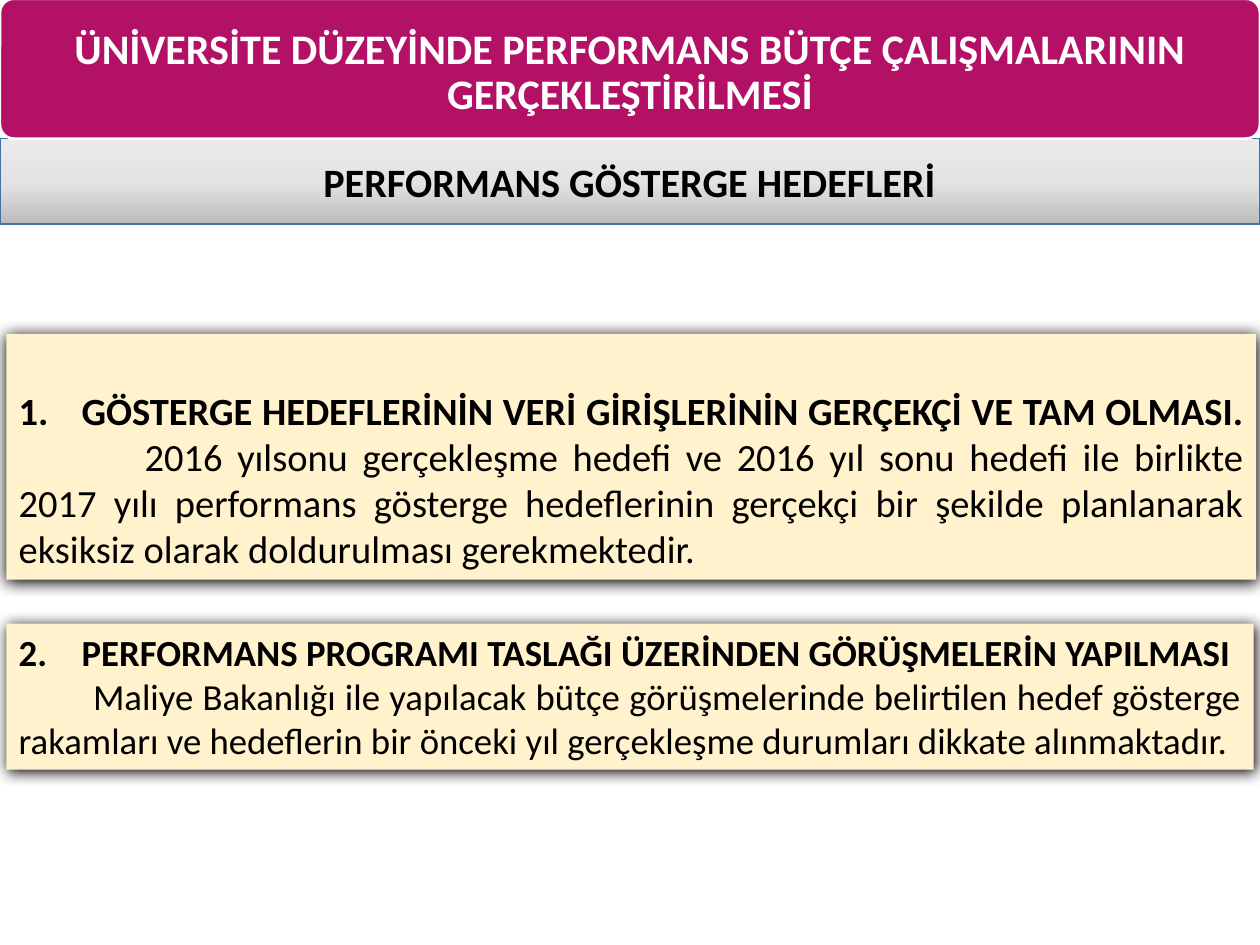
from dataclasses import dataclass

from pptx import Presentation
from pptx.dml.color import RGBColor
from pptx.enum import shapes, text
from pptx.oxml import parse_xml
from pptx.oxml.ns import nsdecls
from pptx.util import Inches, Pt


@dataclass(frozen=True)
class Theme:
    font: str = "Calibri"
    ink: str = "000000"
    light: str = "FFFFFF"
    banner: str = "B31166"
    card: str = "FFF2CC"
    edge: str = "43739E"
    greys: tuple = ((0, "EBEAEA"), (50, "E4E3E3"), (100, "BDBCBC"))
    title_size: int = 24
    subtitle_size: int = 23


@dataclass(frozen=True)
class Box:
    left: float
    top: float
    width: float
    height: float

    def lengths(self) -> tuple:
        return tuple(Inches(v) for v in (self.left, self.top, self.width, self.height))


@dataclass(frozen=True)
class Card:
    box: Box
    number: int
    heading: str
    body: str
    size: int
    body_indent: float
    top_inset: float = 0.05


THEME = Theme()
HANGING = 0.5
BANNER = Box(0, -0.01, 10, 1.11)
TITLE = Box(0.05, 0.17, 9.9, 0.83)
SUBTITLE = Box(0, 1.1, 10, 0.68)
CARDS = (
    Card(Box(0.05, 2.65, 9.92, 1.95), 1,
         "GÖSTERGE HEDEFLERİNİN VERİ GİRİŞLERİNİN GERÇEKÇİ VE TAM OLMASI. ",
         "2016 yılsonu gerçekleşme hedefi ve 2016 yıl sonu hedefi ile birlikte 2017 yılı "
         "performans gösterge hedeflerinin gerçekçi bir şekilde planlanarak eksiksiz "
         "olarak doldurulması gerekmektedir.",
         size=22, body_indent=1, top_inset=0.42),
    Card(Box(0.05, 4.95, 9.9, 1.16), 2,
         "PERFORMANS PROGRAMI TASLAĞI ÜZERİNDEN GÖRÜŞMELERİN YAPILMASI ",
         "Maliye Bakanlığı ile yapılacak bütçe görüşmelerinde belirtilen hedef gösterge "
         "rakamları ve hedeflerin bir önceki yıl gerçekleşme durumları dikkate alınmaktadır.",
         size=21, body_indent=0.59),
)


def add_box(s, box: Box, kind=shapes.MSO_SHAPE.RECTANGLE):
    sp = s.shapes.add_shape(kind, *box.lengths())
    sp.shadow.inherit = False
    return sp


def set_solid(sp, color: str) -> None:
    sp.fill.solid()
    sp.fill.fore_color.rgb = RGBColor.from_string(color)


def set_line(sp, color: str, width: float) -> None:
    sp.line.color.rgb = RGBColor.from_string(color)
    sp.line.width = Pt(width)


def set_gradient(sp, stops: tuple) -> None:
    """Fill from top to bottom with (percent, colour) stops."""
    gs = "".join(f'<a:gs pos="{pos * 1000}"><a:srgbClr val="{color}"/></a:gs>'
                 for pos, color in stops)
    sp.fill.background()
    old = sp._element.spPr.find("{*}noFill")
    old.getparent().replace(old, parse_xml(
        f'<a:gradFill {nsdecls("a")} rotWithShape="1"><a:gsLst>{gs}</a:gsLst>'
        '<a:lin ang="5400000" scaled="0"/></a:gradFill>'))


def set_shadow(sp) -> None:
    effects = sp._element.spPr.find("{*}effectLst")
    effects.append(parse_xml(
        f'<a:outerShdw {nsdecls("a")} blurRad="{Pt(8.5)}" dist="{Pt(1)}" dir="5400000" '
        f'algn="t" rotWithShape="0"><a:srgbClr val="{THEME.ink}"/></a:outerShdw>'))


def set_frame(sp, anchor, top_inset: float = 0.05):
    tf = sp.text_frame
    formats = dict(word_wrap=True, auto_size=text.MSO_AUTO_SIZE.NONE,
                   vertical_anchor=anchor, margin_left=Inches(0.1),
                   margin_right=Inches(0.1), margin_top=Inches(top_inset),
                   margin_bottom=Inches(0.05))
    for name, value in formats.items():
        setattr(tf, name, value)
    return tf


def write(p, words: str, size: int, color: str, align, bold: bool = True) -> None:
    p.alignment = align
    r = p.add_run()
    r.text = words
    for name, value in dict(name=THEME.font, size=Pt(size), bold=bold).items():
        setattr(r.font, name, value)
    r.font.color.rgb = RGBColor.from_string(color)


def set_indent(p, left: float, first: float) -> None:
    pPr = p._p.get_or_add_pPr()
    pPr.set("marL", str(Inches(left)))
    pPr.set("indent", str(Inches(first)))


def set_number(p, start: int) -> None:
    set_indent(p, HANGING, -HANGING)
    pPr = p._p.get_or_add_pPr()
    pPr.append(parse_xml(f'<a:buFont {nsdecls("a")} typeface="+mj-lt"/>'))
    pPr.append(parse_xml(
        f'<a:buAutoNum {nsdecls("a")} type="arabicPeriod" startAt="{start}"/>'))


def add_card(s, card: Card) -> None:
    sp = add_box(s, card.box)
    set_solid(sp, THEME.card)
    sp.line.fill.background()
    set_shadow(sp)
    tf = set_frame(sp, text.MSO_ANCHOR.TOP, card.top_inset)
    justify = text.PP_ALIGN.JUSTIFY
    heading, body = tf.paragraphs[0], tf.add_paragraph()
    write(heading, card.heading, card.size, THEME.ink, justify)
    set_number(heading, card.number)
    write(body, card.body, card.size, THEME.ink, justify, bold=False)
    set_indent(body, 0, card.body_indent)


def add_subtitle(s) -> None:
    sp = add_box(s, SUBTITLE)
    set_gradient(sp, THEME.greys)
    set_line(sp, THEME.edge, 1)
    tf = set_frame(sp, text.MSO_ANCHOR.MIDDLE)
    write(tf.paragraphs[0], "PERFORMANS GÖSTERGE HEDEFLERİ", THEME.subtitle_size,
          THEME.ink, text.PP_ALIGN.CENTER)


def add_banner(s) -> None:
    sp = add_box(s, BANNER, shapes.MSO_SHAPE.ROUNDED_RECTANGLE)
    sp.adjustments[0] = 0.1
    set_solid(sp, THEME.banner)
    set_line(sp, THEME.light, 1.5)


def place_title(s) -> None:
    """Format the title placeholder and bring it in front of the banner."""
    sp = s.shapes.title
    sp.left, sp.top, sp.width, sp.height = TITLE.lengths()
    p = set_frame(sp, text.MSO_ANCHOR.TOP).paragraphs[0]
    p.line_spacing = 0.9
    write(p, "ÜNİVERSİTE DÜZEYİNDE PERFORMANS BÜTÇE ÇALIŞMALARININ GERÇEKLEŞTİRİLMESİ",
          THEME.title_size, THEME.light, text.PP_ALIGN.CENTER)
    s.shapes._spTree.append(sp._element)


def main() -> None:
    prs = Presentation()
    prs.slide_width, prs.slide_height = Inches(10), Inches(7.5)
    s = prs.slides.add_slide(prs.slide_layouts.get_by_name("Title Only"))
    add_subtitle(s)
    add_banner(s)
    for card in CARDS:
        add_card(s, card)
    place_title(s)
    prs.save("out.pptx")


if __name__ == "__main__":
    main()
